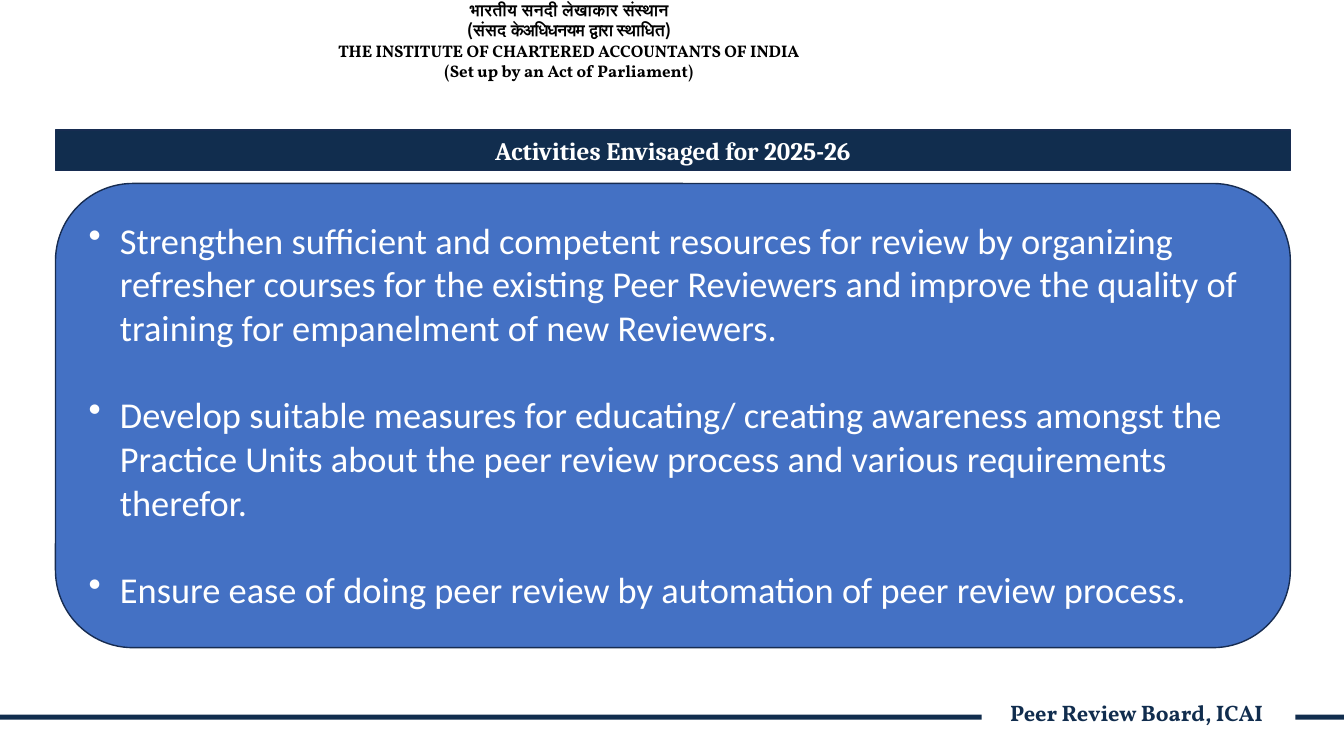
from lxml.etree import SubElement
from pptx import Presentation
from pptx.dml.color import RGBColor
from pptx.enum.shapes import MSO_SHAPE
from pptx.enum.text import MSO_ANCHOR, MSO_AUTO_SIZE, PP_ALIGN
from pptx.oxml.ns import qn
from pptx.util import Inches, Pt

WIDTH, HEIGHT = Inches(13.333), Inches(7.5)
COLORS = {"navy": "112D4E", "outline": "172C51", "blue": "4471C4",
          "white": "FFFFFF", "black": "000000"}
HEADER = [
    [("भारतीय सनदी लेखाकार ", "Arial", 0), ("संस्थान", "Arial", -0.2)],
    [("(", "Noto Sans CJK TC", 0), ("संसद ", "Arial", 0), ("के ", "Arial", -4.2),
     ("अधिधनयम ", "Arial", -0.6), ("द्वारा ", "Arial", -1.2),
     ("स्थाधित", "Arial", -0.1), (")", "Noto Sans CJK TC", -0.1)],
    [("THE INSTITUTE OF CHARTERED ACCOUNTANTS OF INDIA", "Vollkorn", 0)],
    [("(Set up by an Act of Parliament)", "Vollkorn", 0)],
]
ACTIVITIES = [
    "Strengthen sufficient and competent resources for review by organizing "
    "refresher courses for the existing Peer Reviewers and improve the quality "
    "of training for empanelment of new Reviewers.",
    "Develop suitable measures for educating/ creating awareness amongst the "
    "Practice Units about the peer review process and various requirements therefor.",
    "Ensure ease of doing peer review by automation of peer review process.",
]


def rgb(name):
    return RGBColor.from_string(COLORS[name])


def area(left, top, width, height):
    return [int(share * size / 100) for share, size in
            zip((left, top, width, height), (WIDTH, HEIGHT, WIDTH, HEIGHT))]


def apply(obj, **formats):
    for name, value in formats.items():
        setattr(obj, name, value)


def paint(sp, fill, line=None):
    sp.fill.solid()
    sp.fill.fore_color.rgb = rgb(fill)
    if line:
        sp.line.color.rgb = rgb(line)
        sp.line.width = Pt(1)
    else:
        sp.line.fill.background()


def add_panel(s, kind, place, fill, line=None):
    sp = s.shapes.add_shape(kind, *area(*place))
    sp.shadow.inherit = False
    paint(sp, fill, line)


def set_frame(tf, anchor=MSO_ANCHOR.TOP):
    apply(tf, word_wrap=True, auto_size=MSO_AUTO_SIZE.NONE, vertical_anchor=anchor,
          margin_left=0, margin_top=0, margin_right=0, margin_bottom=0)


def add_run(p, text, face, size, color, bold=False, spacing=0):
    r = p.add_run()
    r.text = text
    apply(r.font, name=face, size=Pt(size), bold=bold)
    r.font.color.rgb = rgb(color)
    rPr = r.font._element
    SubElement(rPr, qn("a:cs"), typeface=face)
    if spacing:
        rPr.set("spc", str(round(spacing * 100)))


def add_bullet(p):
    pPr = p._p.get_or_add_pPr()
    pPr.set("marL", str(Inches(0.33)))
    pPr.set("indent", str(Inches(-0.31)))
    SubElement(pPr, qn("a:buChar"), char="•")
    tabs = SubElement(pPr, qn("a:tabLst"))
    SubElement(tabs, qn("a:tab"), pos=str(Inches(0.33)), algn="l")


def add_text(s, place, lines, size, color, bold=False, bullet=False, gap=0, **formats):
    tf = s.shapes.add_textbox(*area(*place)).text_frame
    set_frame(tf)
    for i, runs in enumerate(lines):
        p = tf.add_paragraph() if i else tf.paragraphs[0]
        if bullet:
            add_bullet(p)
        if i and gap:
            p.space_before = Pt(gap)
        apply(p, **formats)
        for text, face, spacing in runs:
            add_run(p, text, face, size, color, bold, spacing)


def set_title(s, place, text):
    sp = s.shapes.title
    apply(sp, **dict(zip(("left", "top", "width", "height"), area(*place))))
    paint(sp, "navy", "outline")
    set_frame(sp.text_frame, MSO_ANCHOR.MIDDLE)
    p = sp.text_frame.paragraphs[0]
    apply(p, alignment=PP_ALIGN.CENTER, line_spacing=1.0)
    add_run(p, text, "Cambria", 18, "white", True)


def main():
    prs = Presentation()
    apply(prs, slide_width=WIDTH, slide_height=HEIGHT)
    s = prs.slides.add_slide(prs.slide_layouts[5])
    set_title(s, (4.13, 17.2, 91.88, 5.33), "Activities Envisaged for 2025-26")
    add_text(s, (23.63, 0, 37.43, 11.07), HEADER, 12, "black", bold=True,
             alignment=PP_ALIGN.CENTER)
    for left, width in ((0, 73.05), (96.38, 3.62)):
        add_panel(s, MSO_SHAPE.RECTANGLE, (left, 94.53, width, 0.67), "navy")
    add_panel(s, MSO_SHAPE.ROUNDED_RECTANGLE, (4.13, 24.27, 91.88, 61.4),
              "blue", "outline")
    add_text(s, (6.45, 28.8, 86.2, 52.4), [[(text, "Calibri", 0)] for text in ACTIVITIES],
             26, "white", bullet=True, gap=31.2)
    add_text(s, (75.15, 93.07, 19.28, 3.33), [[("Peer Review Board, ICAI", "Vollkorn", 0)]],
             16, "navy", bold=True, line_spacing=Pt(15.9))
    prs.save("out.pptx")


if __name__ == "__main__":
    main()
